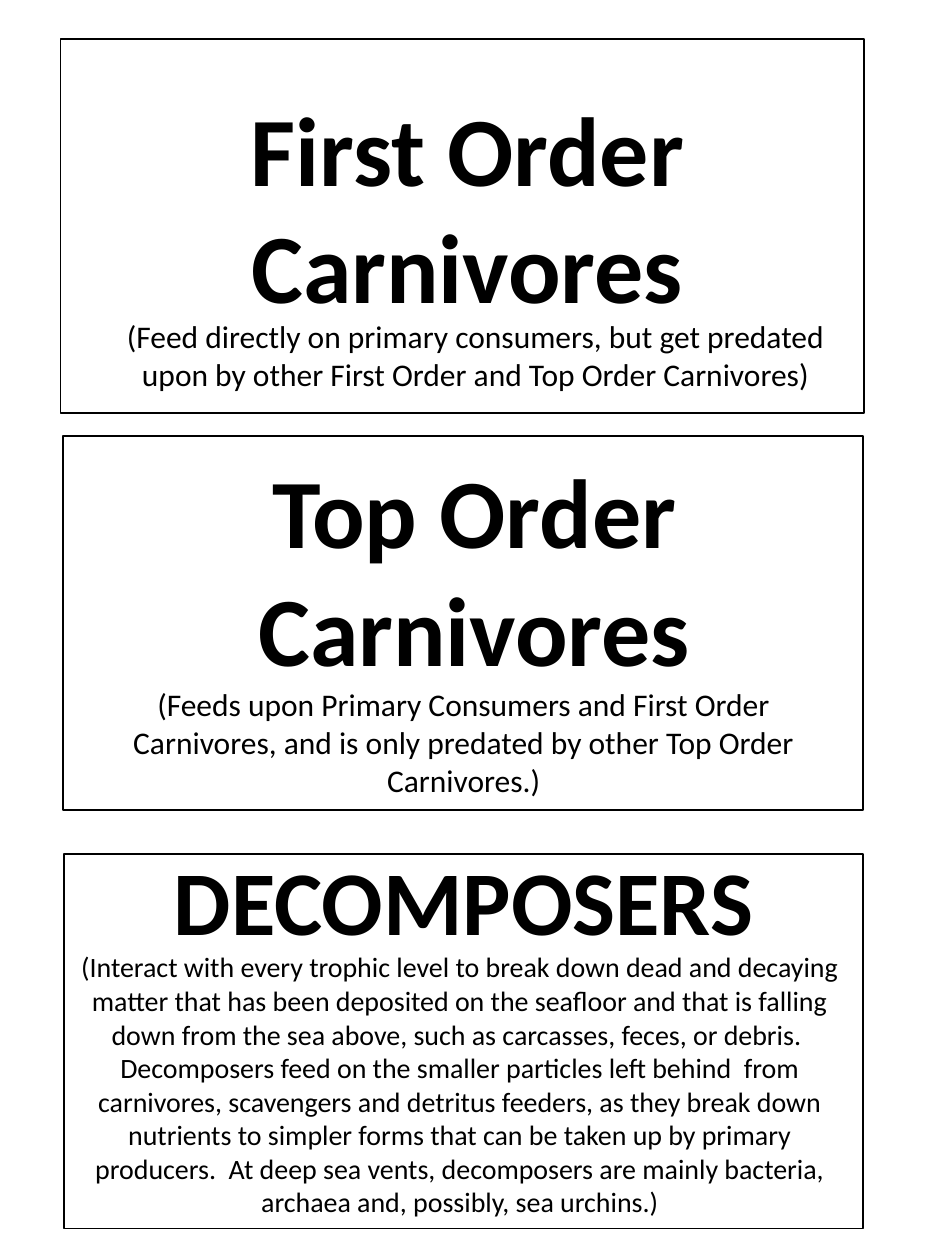
from pptx import Presentation
from pptx.dml.color import RGBColor
from pptx.enum.shapes import MSO_SHAPE
from pptx.enum.text import MSO_AUTO_SIZE, PP_ALIGN
from pptx.util import Inches, Pt

COLORS = {"ink": "000000", "paper": "FFFFFF"}
FONT = "Calibri"
CARD_HEIGHT = 2.97

# Each card: frame (left, top, width), then heading and description
# as (text, size, (left, top, width, height)).
CARDS = [
    ((0.48, 0.31, 6.38),
     ("First Order Carnivores", 56, (0.69, 0.65, 6.04, 1.99)),
     ("(Feed directly on primary consumers, but get predated upon by other "
      "First Order and Top Order Carnivores)", 18, (0.69, 2.47, 6.17, 0.71))),
    ((0.5, 3.46, 6.35),
     ("Top Order Carnivores", 56, (0.79, 3.53, 5.95, 1.99)),
     ("(Feeds upon Primary Consumers and First Order Carnivores, and is only "
      "predated by other Top Order Carnivores.)", 18, (0.71, 5.39, 5.94, 1.01))),
    ((0.51, 6.78, 6.34),
     ("DECOMPOSERS", 52, (0.51, 6.65, 6.34, 0.98)),
     ("(Interact with every trophic level to break down dead and decaying "
      "matter that has been deposited on the seafloor and that is falling "
      "down from the sea above, such as carcasses, feces, or debris.  "
      "Decomposers feed on the smaller particles left behind  from "
      "carnivores, scavengers and detritus feeders, as they break down "
      "nutrients to simpler forms that can be taken up by primary "
      "producers.  At deep sea vents, decomposers are mainly bacteria, "
      "archaea and, possibly, sea urchins.)", 16, (0.48, 7.49, 6.34, 2.26))),
]


class CardSheet:
    """Style and current slide for a sheet of framed cards."""

    def __init__(self, prs):
        self.s = prs.slides.add_slide(prs.slide_layouts[6])
        fill = self.s.background.fill
        fill.solid()
        fill.fore_color.rgb = self.color("paper")

    def color(self, name):
        return RGBColor.from_string(COLORS[name])

    def frame(self, left, top, width):
        sp = self.s.shapes.add_shape(
            MSO_SHAPE.RECTANGLE, Inches(left), Inches(top),
            Inches(width), Inches(CARD_HEIGHT))
        sp.shadow.inherit = False
        sp.fill.background()
        sp.line.color.rgb = self.color("ink")
        sp.line.width = Pt(1)

    def text(self, text, size, box, bold=False):
        sp = self.s.shapes.add_textbox(*map(Inches, box))
        tf = sp.text_frame
        tf.word_wrap = True
        tf.auto_size = MSO_AUTO_SIZE.SHAPE_TO_FIT_TEXT
        p = tf.paragraphs[0]
        p.alignment = PP_ALIGN.CENTER
        r = p.add_run()
        r.text = text
        r.font.name = FONT
        r.font.size = Pt(size)
        r.font.bold = bold
        r.font.color.rgb = self.color("ink")

    def card(self, frame, heading, description):
        self.frame(*frame)
        self.text(*heading, bold=True)
        self.text(*description)


def main():
    prs = Presentation()
    prs.slide_width, prs.slide_height = Inches(7.5), Inches(10)
    sheet = CardSheet(prs)
    for card in CARDS:
        sheet.card(*card)
    prs.save("out.pptx")


if __name__ == "__main__":
    main()
